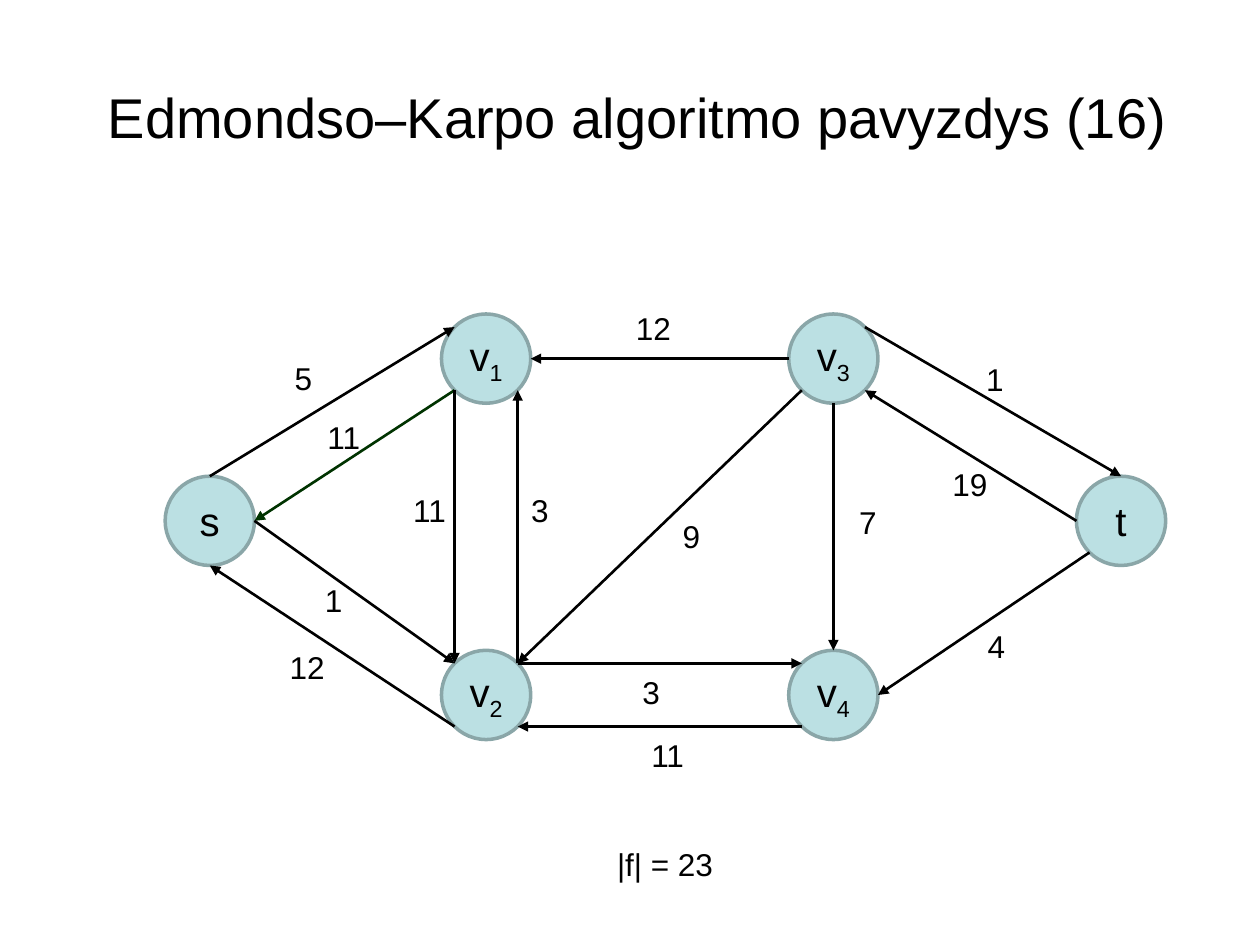
from math import sqrt
from typing import NamedTuple

from lxml import etree
from pptx import Presentation
from pptx.dml.color import RGBColor
from pptx.enum.shapes import MSO_CONNECTOR, MSO_SHAPE
from pptx.enum.text import MSO_ANCHOR, MSO_AUTO_SIZE, PP_ALIGN
from pptx.oxml.ns import qn
from pptx.util import Cm, Pt

OVAL = MSO_SHAPE.OVAL
LINE = MSO_CONNECTOR.STRAIGHT
MID = MSO_ANCHOR.MIDDLE
MID_ALIGN = PP_ALIGN.CENTER
FIT = MSO_AUTO_SIZE.SHAPE_TO_FIT_TEXT
FIXED = MSO_AUTO_SIZE.NONE

BLACK = RGBColor(0x00, 0x00, 0x00)
GREEN = RGBColor(0x00, 0x33, 0x00)
AQUA = RGBColor(0xBB, 0xE0, 0xE3)
RIM = RGBColor(0x8A, 0xA6, 0xA8)

SIZE = 1.8  # node diameter, cm
RAD = SIZE / 2
DIAG = RAD / sqrt(2)

# Offsets from a node's centre to points on its rim
PORTS = {
    "n": (0, -RAD), "s": (0, RAD), "w": (-RAD, 0), "e": (RAD, 0),
    "nw": (-DIAG, -DIAG), "ne": (DIAG, -DIAG),
    "sw": (-DIAG, DIAG), "se": (DIAG, DIAG),
}


class Node(NamedTuple):
    name: str
    sub: str
    x: float
    y: float


class Edge(NamedTuple):
    tail: str
    out: str
    head: str
    into: str
    color: RGBColor = BLACK


class Label(NamedTuple):
    text: str
    x: float
    y: float
    width: float = 0


# Node centres, cm
LEFT, RIGHT = 9.8, 16.8
TOP, MIDDLE, LOW = 7.23, 10.5, 14.01
NODES = [
    Node("v", "1", LEFT, TOP), Node("v", "3", RIGHT, TOP),
    Node("v", "2", LEFT, LOW), Node("v", "4", RIGHT, LOW),
    Node("s", "", 4.23, MIDDLE), Node("t", "", 22.6, MIDDLE),
]
EDGES = [
    Edge("s", "n", "v1", "nw"), Edge("v1", "sw", "s", "e", GREEN),
    Edge("s", "e", "v2", "nw"), Edge("v2", "sw", "s", "s"),
    Edge("v1", "sw", "v2", "nw"), Edge("v2", "ne", "v1", "se"),
    Edge("v3", "w", "v1", "e"), Edge("v3", "sw", "v2", "ne"),
    Edge("v2", "ne", "v4", "nw"), Edge("v4", "sw", "v2", "se"),
    Edge("v3", "s", "v4", "n"), Edge("v3", "ne", "t", "n"),
    Edge("t", "w", "v3", "se"), Edge("t", "sw", "v4", "e"),
]
LABELS = [
    Label("5", 5.69, 7.11), Label("11", 6.35, 8.31),
    Label("1", 6.3, 11.58), Label("12", 5.59, 12.93),
    Label("11", 8.08, 9.78), Label("3", 10.46, 9.78),
    Label("12", 12.57, 6.1), Label("9", 13.51, 10.29),
    Label("3", 12.7, 13.44), Label("11", 12.88, 14.71),
    Label("7", 17.07, 10.01), Label("1", 19.63, 7.14),
    Label("19", 18.95, 9.25), Label("4", 19.66, 12.52),
    Label("|f| = 23", 12.19, 16.92, 2.46),
]


def style(item, **values) -> None:
    for key, value in values.items():
        setattr(item, key, value)


def write(para, text: str, size: float, sub: str = "") -> None:
    for part, base in ((text, ""), (sub, "-25000")):
        if part:
            run = para.add_run()
            run.text = part
            style(run.font, name="Arial", size=Pt(size))
            run.font.color.rgb = BLACK
            if base:
                run.font._element.set("baseline", base)


def add_node(slide, node: Node) -> None:
    shape = slide.shapes.add_shape(
        OVAL, Cm(node.x - RAD), Cm(node.y - RAD), Cm(SIZE), Cm(SIZE))
    shape.shadow.inherit = False
    shape.fill.solid()
    shape.fill.fore_color.rgb = AQUA
    shape.line.color.rgb = RIM
    shape.line.width = Pt(2)
    frame = shape.text_frame
    style(frame, vertical_anchor=MID, word_wrap=False,
          margin_left=0, margin_right=0, margin_top=0, margin_bottom=0)
    para = frame.paragraphs[0]
    para.alignment = MID_ALIGN
    write(para, node.name, 23, node.sub)


def add_edge(slide, edge: Edge, nodes: dict[str, Node]) -> None:
    ends = []
    for name, port in ((edge.tail, edge.out), (edge.head, edge.into)):
        node, (dx, dy) = nodes[name], PORTS[port]
        ends += [Cm(node.x + dx), Cm(node.y + dy)]
    line = slide.shapes.add_connector(LINE, *ends)
    line.line.color.rgb = edge.color
    line.line.width = Pt(1.5)
    # Arrowhead, and no shadow
    etree.SubElement(line.line._get_or_add_ln(), qn("a:tailEnd"),
                     type="triangle")
    etree.SubElement(line._element.spPr, qn("a:effectLst"))


def add_label(slide, label: Label) -> None:
    width = label.width or 0.5 + 0.36 * len(label.text)
    box = slide.shapes.add_textbox(
        Cm(label.x), Cm(label.y), Cm(width), Cm(1.02))
    style(box.text_frame, word_wrap=False, auto_size=FIT)
    write(box.text_frame.paragraphs[0], label.text, 18)


def main() -> None:
    deck = Presentation()
    style(deck, slide_width=Cm(25.4), slide_height=Cm(19.05))
    slide = deck.slides.add_slide(deck.slide_layouts[5])

    # Title
    title = slide.shapes.title
    style(title, left=Cm(1.27), top=Cm(0.76),
          width=Cm(22.86), height=Cm(3.18))
    style(title.text_frame, vertical_anchor=MID, word_wrap=True,
          auto_size=FIXED)
    para = title.text_frame.paragraphs[0]
    para.alignment = MID_ALIGN
    write(para, " Edmondso–Karpo algoritmo pavyzdys (16)", 32)

    # Flow network
    nodes = {node.name + node.sub: node for node in NODES}
    for node in NODES:
        add_node(slide, node)
    for edge in EDGES:
        add_edge(slide, edge, nodes)
    for label in LABELS:
        add_label(slide, label)

    deck.save("out.pptx")


if __name__ == "__main__":
    main()
